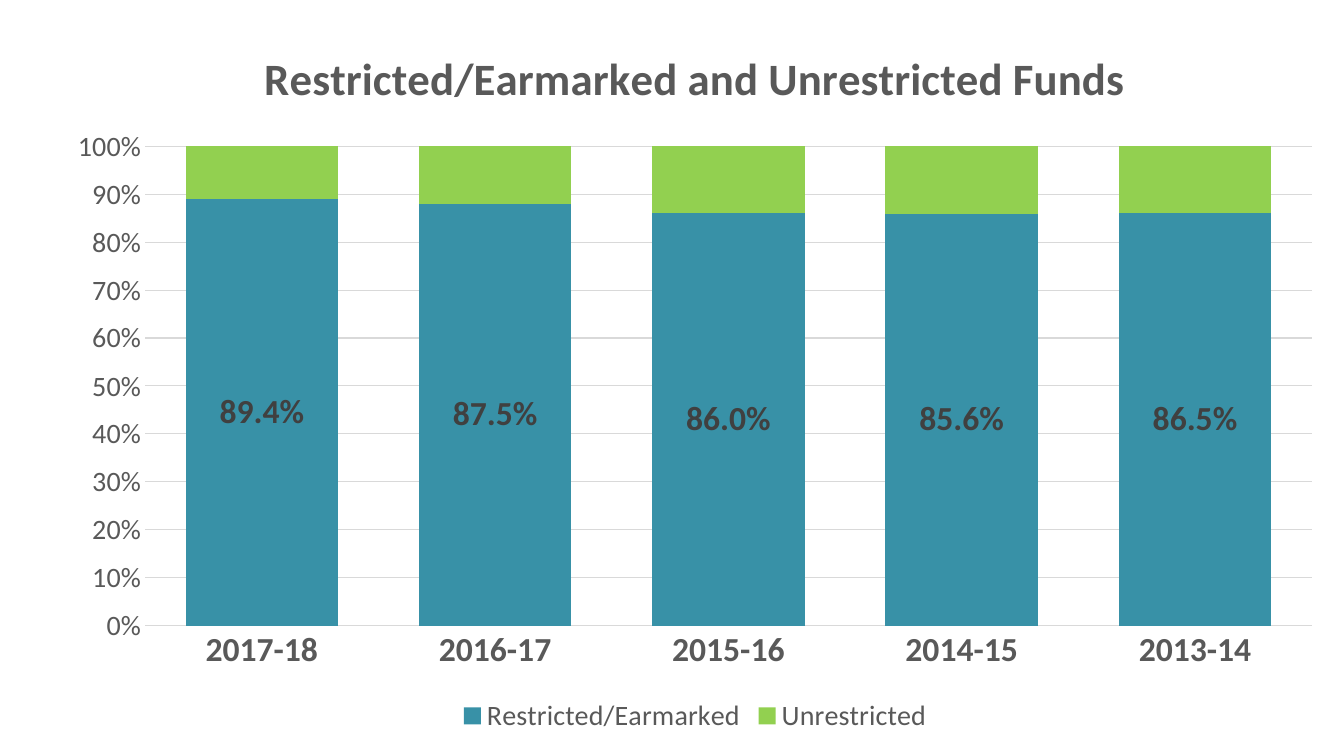
from dataclasses import dataclass
from lxml.etree import SubElement as Sub
from pptx import Presentation
from pptx.chart.data import CategoryChartData as ChartData
from pptx.dml.color import RGBColor as Rgb
from pptx.enum.chart import XL_CHART_TYPE as Kind
from pptx.enum.chart import XL_LABEL_POSITION as Spot
from pptx.enum.chart import XL_LEGEND_POSITION as Side
from pptx.enum.chart import XL_TICK_MARK as Tick
from pptx.oxml.ns import qn
from pptx.util import Inches, Pt

COLS, ROWS = 13.33, 7.5
YEARS = ["2017-18", "2016-17", "2015-16", "2014-15", "2013-14"]
FUNDS = {
    "Restricted/Earmarked": [0.894, 0.875, 0.86, 0.856, 0.865],
    "Unrestricted": [0.11, 0.12, 0.14, 0.14, 0.14],
}


@dataclass(frozen=True)
class Theme:
    """Colours, font and type sizes."""
    face: str = "Calibri"
    text: str = "595959"
    label: str = "404040"
    rule: str = "D9D9D9"
    fills: tuple = ("3891A7", "92D050")
    title: int = 32
    large: int = 24
    small: int = 20


class Deck:
    """Builds the slide from one theme on a grid of one-inch cells."""

    def __init__(self, theme):
        """Open a blank slide."""
        self.theme = theme
        self.prs = Presentation()
        self.prs.slide_width = Inches(COLS)
        self.prs.slide_height = Inches(ROWS)
        self.slide = self.prs.slides.add_slide(self.prs.slide_layouts[6])

    def style(self, font, size, bold=False, color=None):
        """Set a font."""
        font.name, font.size, font.bold = self.theme.face, Pt(size), bold
        font.color.rgb = Rgb.from_string(color or self.theme.text)

    def rule(self, line):
        """Set a thin grey line."""
        line.width = Pt(0.75)
        line.color.rgb = Rgb.from_string(self.theme.rule)

    def place(self, part, index, box, **cells):
        """Fix a chart part at grid cells counted within the chart's box."""
        for old in part.findall(qn("c:layout")):
            part.remove(old)
        layout = part.makeelement(qn("c:layout"))
        part.insert(index, layout)
        manual = Sub(layout, qn("c:manualLayout"))
        if "w" in cells:
            Sub(manual, qn("c:layoutTarget")).set("val", "inner")
        for key in ("x", "y"):
            Sub(manual, qn(f"c:{key}Mode")).set("val", "edge")
        for key, cell in cells.items():
            whole = box[2] if key in "xw" else box[3]
            Sub(manual, qn(f"c:{key}")).set("val", str(cell / whole))

    def chart(self, title, years, series, box):
        """Add a full-height stacked column chart."""
        data = ChartData(number_format="0.0%")
        data.categories = years
        for name, vals in series.items():
            data.add_series(name, vals)
        chart = self.slide.shapes.add_chart(
            Kind.COLUMN_STACKED_100, *map(Inches, box), data).chart
        self.style(chart.font, self.theme.small)
        self.head(chart, title, box)
        self.axes(chart)
        self.bars(chart)
        chart.has_legend = True
        chart.legend.position = Side.BOTTOM
        chart.legend.include_in_layout = False
        self.style(chart.legend.font, self.theme.small)
        plot = next(chart.element.iter(qn("c:plotArea")))
        self.place(plot, 0, box, x=0.92, y=1.16, w=11.57, h=4.76)

    def head(self, chart, title, box):
        """Set the chart title."""
        chart.has_title = True
        frame = chart.chart_title.text_frame
        frame.text = title
        self.style(frame.paragraphs[0].font, self.theme.title, True)
        part = next(chart.element.iter(qn("c:title")))
        self.place(part, 1, box, x=2.02, y=0.1)

    def axes(self, chart):
        """Style both axes and the grid."""
        cat, val = chart.category_axis, chart.value_axis
        for axis in (cat, val):
            axis.major_tick_mark = axis.minor_tick_mark = Tick.NONE
        self.style(cat.tick_labels.font, self.theme.large, True)
        self.rule(cat.format.line)
        self.style(val.tick_labels.font, self.theme.small)
        val.tick_labels.number_format = "0%"
        val.tick_labels.number_format_is_linked = False
        val.minimum_scale, val.maximum_scale, val.major_unit = 0, 1, 0.1
        val.format.line.fill.background()
        val.has_major_gridlines = True
        self.rule(val.major_gridlines.format.line)

    def bars(self, chart):
        """Colour the columns and label the lower ones."""
        plot = chart.plots[0]
        plot.gap_width, plot.overlap = 53, 100
        plot.vary_by_categories = False
        for bar, color in zip(plot.series, self.theme.fills):
            bar.format.fill.solid()
            bar.format.fill.fore_color.rgb = Rgb.from_string(color)
        tags = plot.series[0].data_labels
        tags.show_value = True
        tags.position = Spot.CENTER
        tags.number_format = "0.0%"
        tags.number_format_is_linked = False
        self.style(tags.font, self.theme.large, True, self.theme.label)


def main():
    """Build and save the slide."""
    deck = Deck(Theme())
    deck.chart("Restricted/Earmarked and Unrestricted Funds", YEARS, FUNDS,
               (0.52, 0.29, 12.75, 7.04))
    deck.prs.save("out.pptx")


if __name__ == "__main__":
    main()
